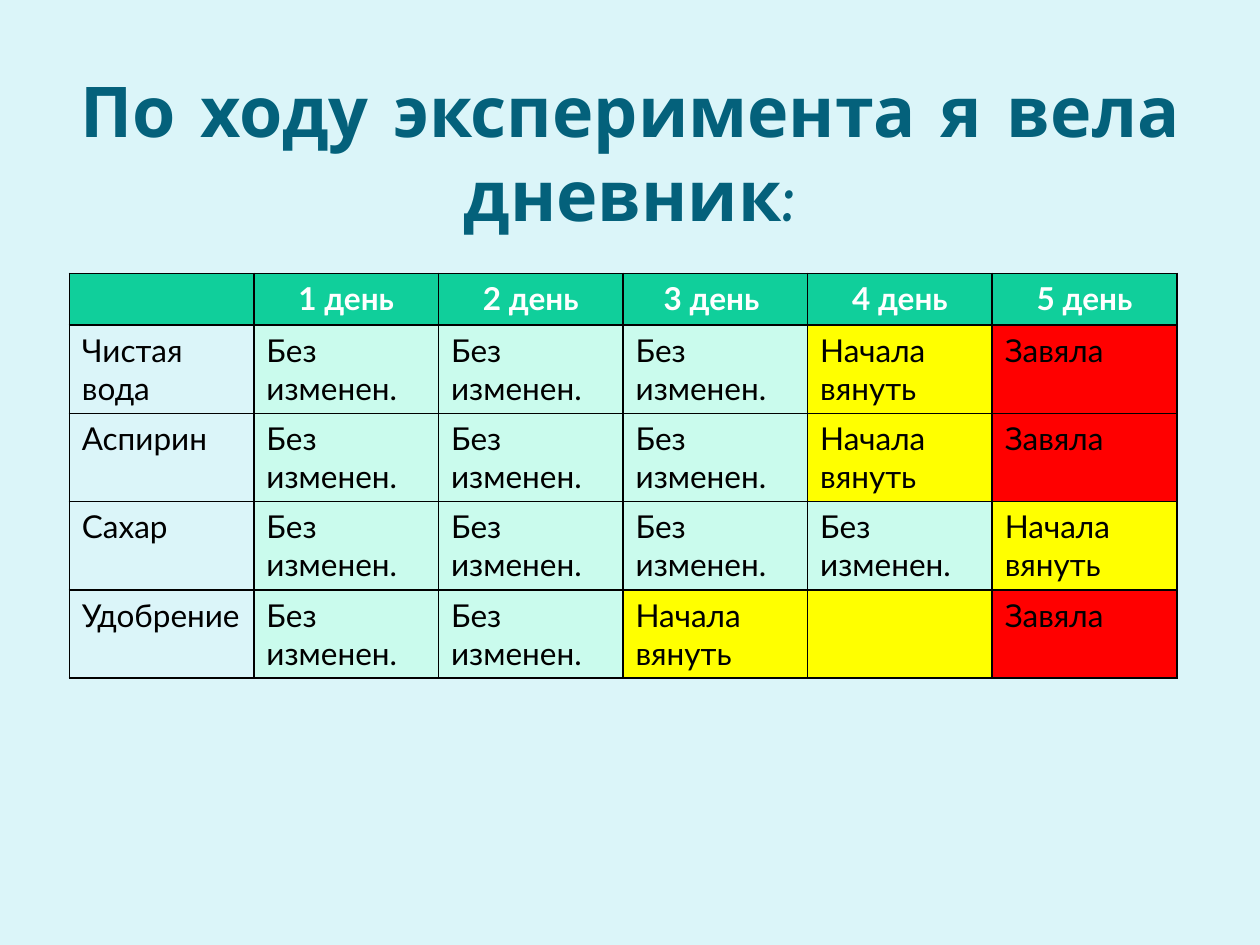
from lxml.etree import SubElement
from pptx import Presentation
from pptx.dml.color import RGBColor
from pptx.enum.text import MSO_ANCHOR as Anchor, PP_ALIGN as Align
from pptx.oxml.ns import qn
from pptx.util import Inches, Pt

UNCHANGED, WILTING, WILTED = "Без изменен.", "Начала вянуть", "Завяла"
STATE_FILLS = {UNCHANGED: "CAFBED", WILTING: "FFFF00", "": "FFFF00", WILTED: "FF0000"}
DAYS = ["", "1 день", "2 день", "3 день ", "4 день", "5 день"]
DIARY = {
    "Чистая вода": [UNCHANGED] * 3 + [WILTING, WILTED],
    "Аспирин": [UNCHANGED] * 3 + [WILTING, WILTED],
    "Сахар": [UNCHANGED] * 4 + [WILTING],
    "Удобрение": [UNCHANGED] * 2 + [WILTING, "", WILTED],
}


def rgb(value):
    """Turn a hex string into a colour."""
    return RGBColor.from_string(value)


def write(frame, text, size=18, font="Lato", color="000000", bold=False, align=Align.LEFT):
    """Put one formatted paragraph into a text frame."""
    paragraph = frame.paragraphs[0]
    paragraph.alignment = align
    if not text:
        return
    run = paragraph.add_run()
    run.text = text
    run.font.size = Pt(size)
    run.font.name = font
    run.font.bold = bold
    run.font.color.rgb = rgb(color)


def add_title(slide, text):
    """Add the centred slide heading."""
    heading = slide.shapes.add_textbox(Inches(0.5), Inches(0.58), Inches(9), Inches(1.25))
    heading.text_frame.word_wrap = True
    heading.text_frame.vertical_anchor = Anchor.MIDDLE
    write(heading.text_frame, text, size=40, font="Comic Neue", color="04617B",
          bold=True, align=Align.CENTER)


def outline(cell, color="000000", width=1):
    """Draw all four borders of a cell."""
    properties = cell._tc.get_or_add_tcPr()
    for side in ("a:lnL", "a:lnR", "a:lnT", "a:lnB"):
        border = SubElement(properties, qn(side), w=str(Pt(width)))
        SubElement(SubElement(border, qn("a:solidFill")), qn("a:srgbClr"), val=color)


def fill_cell(cell, text, fill, **style):
    """Give a cell its borders, fill and text."""
    outline(cell)
    cell.fill.solid()
    cell.fill.fore_color.rgb = rgb(fill)
    write(cell.text_frame, text, **style)


def add_diary(slide):
    """Add the table of daily observations."""
    table = slide.shapes.add_table(len(DIARY) + 1, len(DAYS), Inches(0.55), Inches(2.17),
                                   Inches(8.79), Inches(3.21)).table
    for column in table.columns:
        column.width = Inches(8.79 / len(DAYS))
    for index, row in enumerate(table.rows):
        row.height = Inches(0.7 if index else 0.41)
    for column, day in enumerate(DAYS):
        fill_cell(table.cell(0, column), day, "10CF9B", color="FFFFFF", bold=True,
                  align=Align.CENTER)
    for row, (solution, states) in enumerate(DIARY.items(), 1):
        fill_cell(table.cell(row, 0), solution, "DBF5F9")
        for column, state in enumerate(states, 1):
            fill_cell(table.cell(row, column), state, STATE_FILLS[state])


def main():
    """Build and save the slide."""
    deck = Presentation()
    deck.slide_width, deck.slide_height = Inches(10), Inches(7.5)
    slide = deck.slides.add_slide(deck.slide_layouts[6])
    slide.background.fill.solid()
    slide.background.fill.fore_color.rgb = rgb("DBF5F9")
    add_title(slide, "По ходу эксперимента я вела дневник:")
    add_diary(slide)
    deck.save("out.pptx")


if __name__ == "__main__":
    main()
